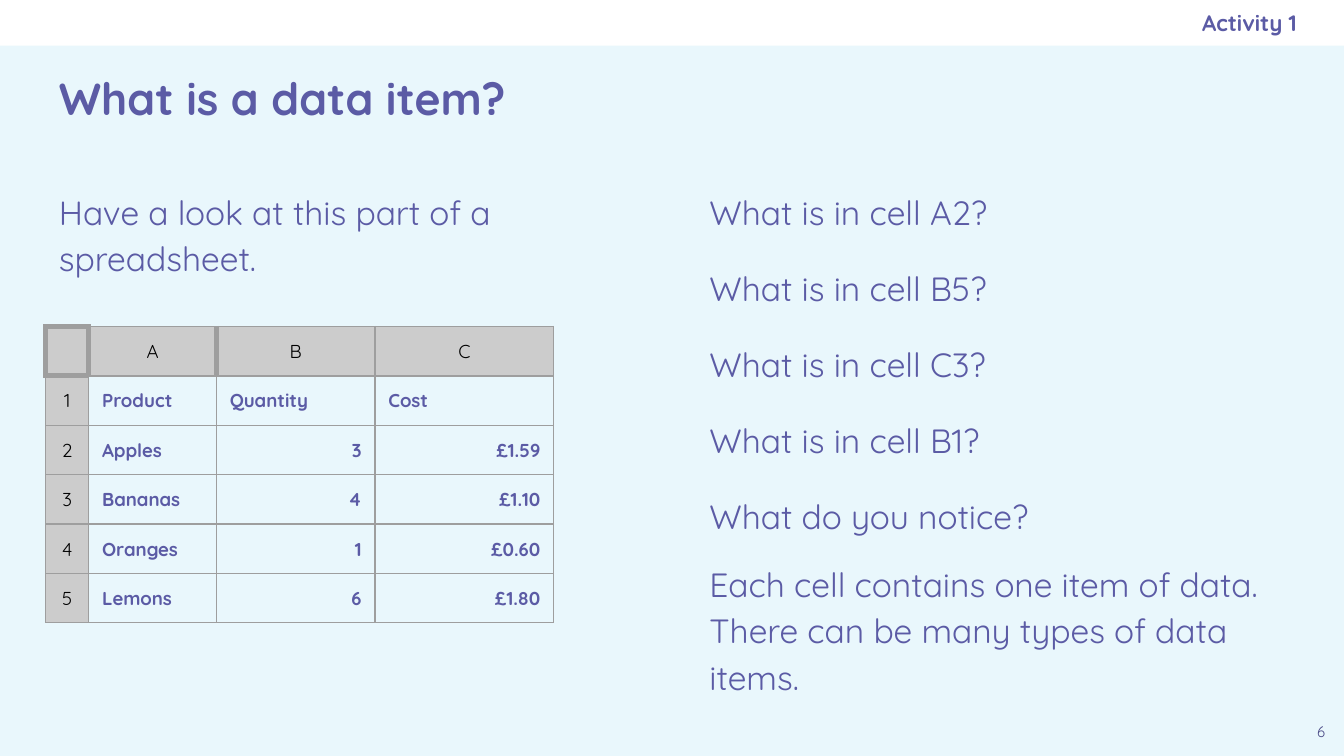
from dataclasses import dataclass

from lxml import etree
from pptx import Presentation
from pptx import util as u
from pptx.dml import color
from pptx.enum import shapes, text
from pptx.oxml import ns


@dataclass(frozen=True)
class Theme:
    font: str = "Quicksand"
    background: str = "E9F7FC"
    bar: str = "FFFFFF"
    ink: str = "5B5BA5"
    number_ink: str = "494985"
    header_fill: str = "CCCCCC"
    header_ink: str = "000000"
    border: str = "9E9E9E"
    title: int = 24
    body: int = 18
    label: int = 12
    cell: int = 10
    number: int = 8
    thin: float = 0.75
    thick: float = 3


theme = Theme()
LEFT, CENTER, RIGHT = text.PP_ALIGN.LEFT, text.PP_ALIGN.CENTER, text.PP_ALIGN.RIGHT
TOP, MIDDLE = text.MSO_ANCHOR.TOP, text.MSO_ANCHOR.MIDDLE


def write(paragraph, words, size, ink=theme.ink, bold=False, **paragraph_format):
    run = paragraph.add_run()
    run.text = words
    font_format = {"name": theme.font, "size": u.Pt(size), "bold": bold}
    for name, value in font_format.items():
        setattr(run.font, name, value)
    run.font.color.rgb = color.RGBColor.from_string(ink)
    for name, value in paragraph_format.items():
        setattr(paragraph, name, value)


def add_frame(box, anchor=TOP, right_margin=0.1):
    frame = slide.shapes.add_textbox(*map(u.Inches, box)).text_frame
    frame_format = {
        "word_wrap": True,
        "vertical_anchor": anchor,
        "margin_left": u.Inches(0.1),
        "margin_right": u.Inches(right_margin),
        "margin_top": u.Inches(0.1),
        "margin_bottom": u.Inches(0.1),
    }
    for name, value in frame_format.items():
        setattr(frame, name, value)
    return frame


presentation = Presentation()
presentation.slide_width = u.Inches(10)
presentation.slide_height = u.Inches(10 * 9 / 16)
slide = presentation.slides.add_slide(presentation.slide_layouts[6])
slide.background.fill.solid()
slide.background.fill.fore_color.rgb = color.RGBColor.from_string(theme.background)

bar = slide.shapes.add_shape(
    shapes.MSO_SHAPE.RECTANGLE, 0, 0, presentation.slide_width, u.Inches(0.34)
)
bar.shadow.inherit = False
bar.fill.solid()
bar.fill.fore_color.rgb = color.RGBColor.from_string(theme.bar)
bar.line.fill.background()

intro = add_frame((0.34, 1.28, 4.48, 4))
write(intro.paragraphs[0], "Have a look at this part of a spreadsheet.", theme.body,
      line_spacing=1.15)

title = add_frame((0.34, 0.35, 9.32, 0.76), MIDDLE)
write(title.paragraphs[0], "What is a data item?", theme.title, bold=True)

number = add_frame((9.66, 5.31, 0.34, 0.31))
write(number.paragraphs[0], "6", theme.number, theme.number_ink, alignment=CENTER)

activity = add_frame((5.75, 0, 3.9, 0.34), MIDDLE, right_margin=0)
write(activity.paragraphs[0], "Activity 1", theme.label, bold=True, alignment=RIGHT)

questions = [
    "What is in cell A2?",
    "What is in cell B5?",
    "What is in cell C3?",
    "What is in cell B1?",
    "What do you notice?",
]
question_frame = add_frame((5.18, 1.28, 4.48, 2.73))
for index, question in enumerate(questions):
    paragraph = question_frame.add_paragraph() if index else question_frame.paragraphs[0]
    write(paragraph, question, theme.body, line_spacing=1.15,
          space_before=u.Pt(16 if index else 0))
paragraph.space_after = u.Pt(16)

rows = [
    ("", "A", "B", "C"),
    ("1", "Product", "Quantity", "Cost"),
    ("2", "Apples", "3", "£1.59"),
    ("3", "Bananas", "4", "£1.10"),
    ("4", "Oranges", "1", "£0.60"),
    ("5", "Lemons", "6", "£1.80"),
]
column_widths = [0.32, 0.95, 1.18, 1.33]
thick_edges = {
    (0, 0): ("lnL", "lnR", "lnT", "lnB"),
    (0, 1): ("lnL",),
    (0, 2): ("lnL",),
    (1, 0): ("lnT",),
}
table_frame = slide.shapes.add_table(
    len(rows), len(column_widths), u.Inches(0.34), u.Inches(2.43),
    u.Inches(sum(column_widths)), u.Inches(2.2),
)
table = table_frame.table
table.first_row = False
table.horz_banding = False
for column, width in zip(table.columns, column_widths):
    column.width = u.Inches(width)

for row_index, row in enumerate(rows):
    table.rows[row_index].height = u.Inches(0.34)
    for column_index, words in enumerate(row):
        cell = table.cell(row_index, column_index)
        for side in ("left", "right", "top", "bottom"):
            setattr(cell, f"margin_{side}", u.Inches(0.1))

        properties = cell._tc.get_or_add_tcPr()
        for edge in ("lnL", "lnR", "lnT", "lnB"):
            is_thick = edge in thick_edges.get((row_index, column_index), ())
            width = u.Pt(theme.thick if is_thick else theme.thin)
            line = etree.SubElement(properties, ns.qn(f"a:{edge}"), w=str(width))
            fill = etree.SubElement(line, ns.qn("a:solidFill"))
            etree.SubElement(fill, ns.qn("a:srgbClr"), val=theme.border)

        is_header = row_index == 0 or column_index == 0
        if is_header:
            cell.fill.solid()
            cell.fill.fore_color.rgb = color.RGBColor.from_string(theme.header_fill)
            alignment = CENTER
        else:
            cell.fill.background()
            alignment = RIGHT if row_index > 1 and column_index > 1 else LEFT

        paragraph = cell.text_frame.paragraphs[0]
        if words:
            write(paragraph, words, theme.cell,
                  theme.header_ink if is_header else theme.ink,
                  bold=not is_header, alignment=alignment)
        else:
            etree.SubElement(paragraph._p, ns.qn("a:endParaRPr"), sz=str(theme.cell * 100))
table_frame.height = u.Inches(2.2)

answer = add_frame((5.18, 4.05, 4.48, 0.9))
write(answer.paragraphs[0],
      "Each cell contains one item of data. There can be many types of data items.",
      theme.body, line_spacing=1.15, space_after=u.Pt(16))

presentation.save("out.pptx")
